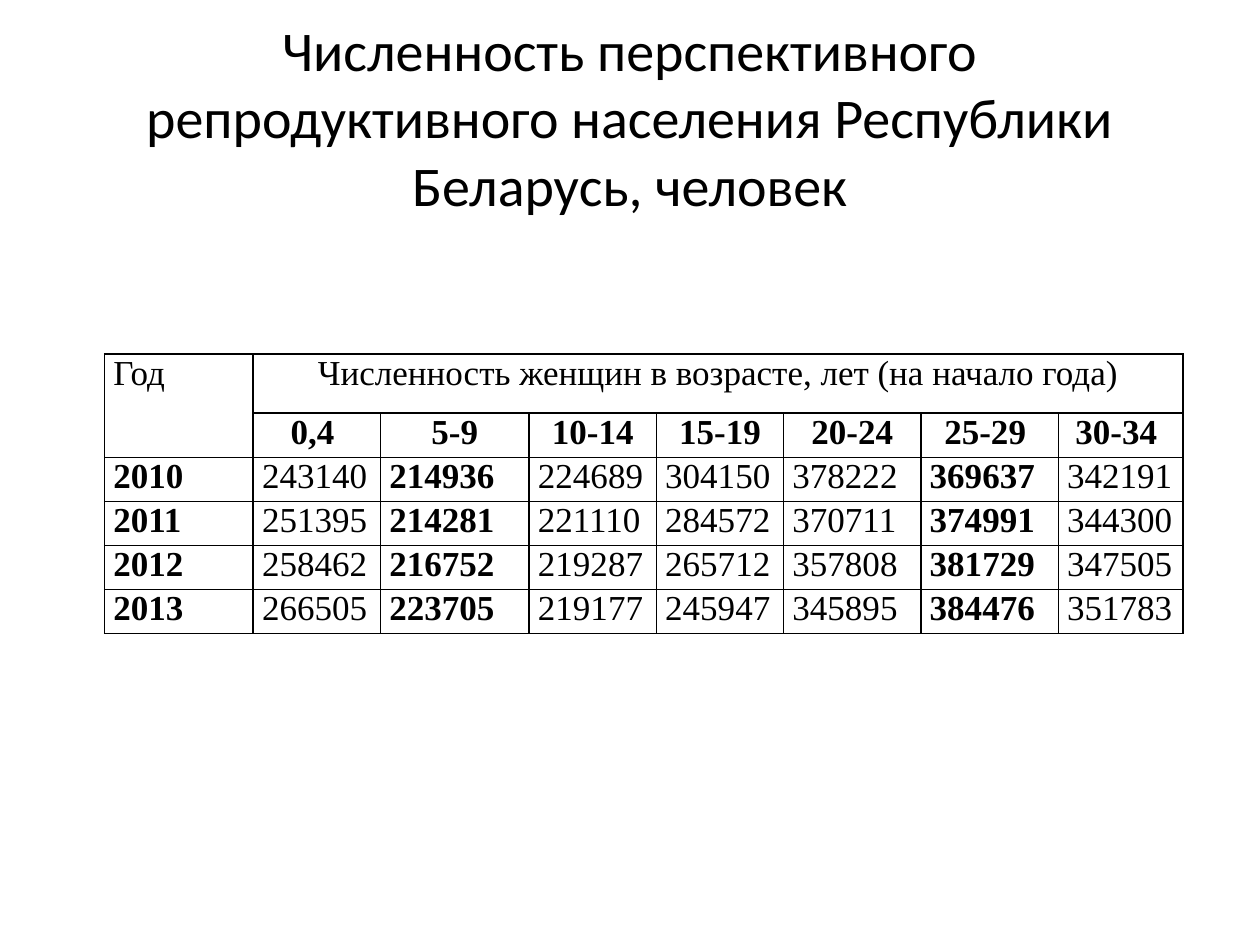
from lxml.etree import SubElement
from pptx import Presentation
from pptx.dml.color import RGBColor
from pptx.enum.text import MSO_ANCHOR, PP_ALIGN
from pptx.oxml.ns import qn
from pptx.util import Inches, Pt

BLACK = "000000"
AGES = ["0,4 ", "5-9", "10-14", "15-19", "20-24", "25-29 ", "30-34 "]
WOMEN = {
    "2010": [243140, 214936, 224689, 304150, 378222, 369637, 342191],
    "2011": [251395, 214281, 221110, 284572, 370711, 374991, 344300],
    "2012": [258462, 216752, 219287, 265712, 357808, 381729, 347505],
    "2013": [266505, 223705, 219177, 245947, 345895, 384476, 351783],
}
COLUMNS = [1.18, 1.01, 1.18, 1.01, 1.01, 1.09, 1.09, 0.99]
ROWS = [0.47] + [0.35] * 5
BOLD_COLUMNS = (0, 2, 6)


def color(value):
    return RGBColor.from_string(value)


def write(frame, text, font="Times New Roman", size=20, bold=False, align=PP_ALIGN.JUSTIFY):
    frame.word_wrap = True
    paragraph = frame.paragraphs[0]
    paragraph.alignment = align
    run = paragraph.add_run()
    run.text = text
    run.font.name = font
    run.font.size = Pt(size)
    run.font.bold = bold
    run.font.color.rgb = color(BLACK)


deck = Presentation()
deck.slide_width, deck.slide_height = Inches(10), Inches(7.5)
slide = deck.slides.add_slide(deck.slide_layouts[6])

width, height = deck.slide_width, deck.slide_height
title = slide.shapes.add_textbox(
    int(width * 0.05), int(height * 0.04), int(width * 0.9), Inches(1.25)
).text_frame
title.vertical_anchor = MSO_ANCHOR.MIDDLE
write(title, "Численность перспективного репродуктивного населения Республики Беларусь, человек",
      font="Calibri", size=32, align=PP_ALIGN.CENTER)

population = slide.shapes.add_table(
    len(ROWS), len(COLUMNS), Inches(0.83), Inches(2.81),
    Inches(sum(COLUMNS)), Inches(sum(ROWS))
).table
population.first_row = population.horz_banding = False
for column, share in zip(population.columns, COLUMNS):
    column.width = Inches(share)
for row, share in zip(population.rows, ROWS):
    row.height = Inches(share)

for cell in population.iter_cells():
    cell.margin_left = cell.margin_right = Inches(0.07)
    cell.margin_top = cell.margin_bottom = 0
    properties = cell._tc.get_or_add_tcPr()
    for side in ("a:lnL", "a:lnR", "a:lnT", "a:lnB"):
        border = SubElement(properties, qn(side), w=str(Pt(1)))
        SubElement(SubElement(border, qn("a:solidFill")), qn("a:srgbClr"), val=BLACK)
    cell.fill.background()

population.cell(0, 0).merge(population.cell(1, 0))
population.cell(0, 1).merge(population.cell(0, len(AGES)))
write(population.cell(0, 0).text_frame, "Год")
write(population.cell(0, 1).text_frame, "Численность женщин в возрасте, лет (на начало года)",
      align=PP_ALIGN.CENTER)
for position, age in enumerate(AGES, 1):
    write(population.cell(1, position).text_frame, age, bold=True, align=PP_ALIGN.CENTER)
for line, (year, counts) in enumerate(WOMEN.items(), 2):
    for position, value in enumerate([year, *counts]):
        write(population.cell(line, position).text_frame, str(value),
              bold=position in BOLD_COLUMNS)

deck.save("out.pptx")
